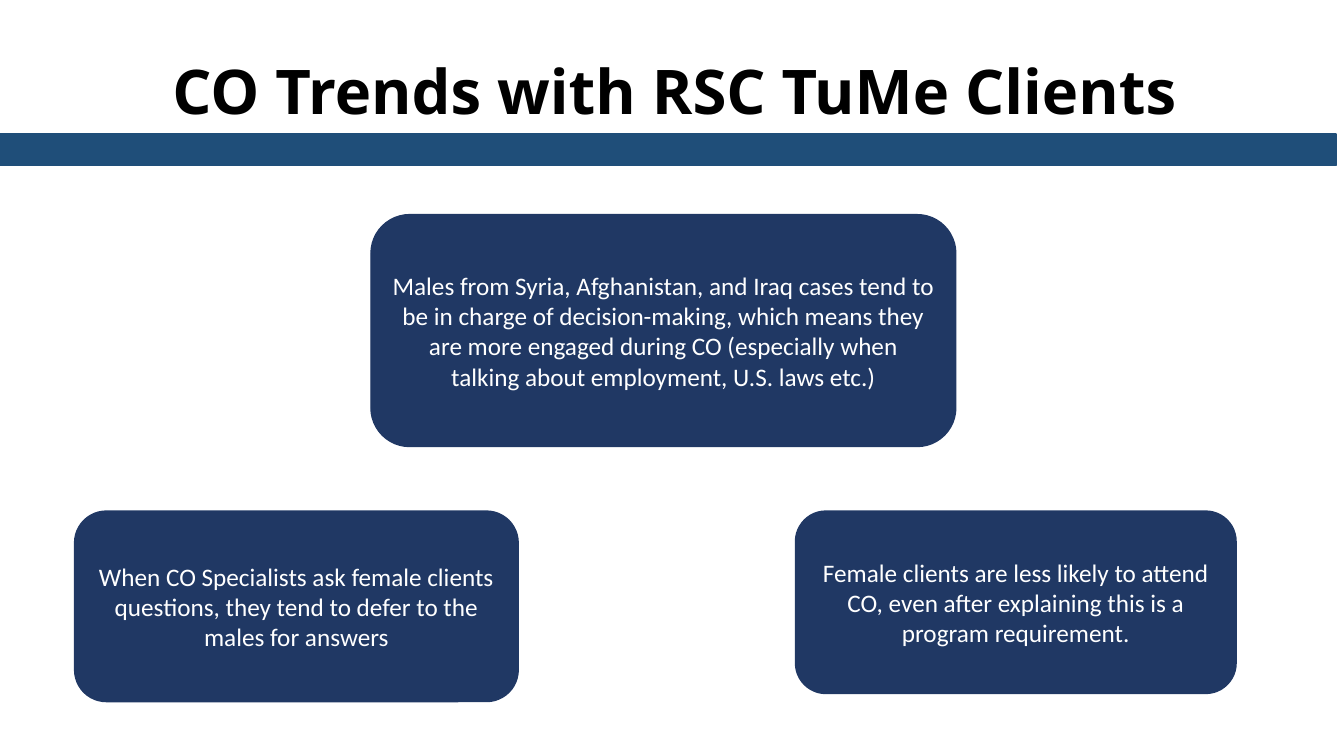
from dataclasses import dataclass

from pptx import Presentation
from pptx.dml.color import RGBColor
from pptx.enum.shapes import MSO_SHAPE as Shape
from pptx.enum.text import MSO_ANCHOR as Anchor, MSO_AUTO_SIZE as AutoSize, PP_ALIGN as Align
from pptx.util import Inches, Pt


@dataclass(frozen=True)
class Theme:
    title_font: str = "Open Sans"
    body_font: str = "Calibri"
    title_size: int = 44
    body_size: int = 18
    title_color: str = "000000"
    body_color: str = "FFFFFF"
    band: str = "1F4E79"
    card: str = "203864"


THEME = Theme()

TITLE = "CO Trends with RSC TuMe Clients"
TITLE_BOX = (0.58, 0.47, 12.23, 0.84)
BAND_BOX = (-0.08, 1.33, 13.33, 0.31)
LOWER_TOP = 5.07
CARDS = [
    ((3.68, 2.13, 5.8, 2.3),
     "Males from Syria, Afghanistan, and Iraq cases tend to be in charge of "
     "decision-making, which means they are more engaged during CO (especially "
     "when talking about employment, U.S. laws etc.)"),
    ((0.74, LOWER_TOP, 4.4, 1.89),
     "When CO Specialists ask female clients questions, they tend to defer to "
     "the males for answers"),
    ((7.89, LOWER_TOP, 4.37, 1.81),
     "Female clients are less likely to attend CO, even after explaining this "
     "is a program requirement."),
]


def write_text(shape, text, font_name, size, color, bold=False):
    """Fill a shape with one centred, wrapped paragraph."""
    frame = shape.text_frame
    frame.text = text
    frame.word_wrap = True
    frame.auto_size = AutoSize.NONE
    frame.vertical_anchor = Anchor.MIDDLE
    para = frame.paragraphs[0]
    para.alignment = Align.CENTER
    font = para.runs[0].font
    font.name, font.size, font.bold = font_name, Pt(size), bold
    font.color.rgb = RGBColor.from_string(color)


def add_block(page, kind, box, color):
    """Add a flat shape whose outline matches its fill."""
    block = page.shapes.add_shape(kind, *map(Inches, box))
    block.shadow.inherit = False
    block.fill.solid()
    block.fill.fore_color.rgb = RGBColor.from_string(color)
    block.line.color.rgb = RGBColor.from_string(color)
    block.line.width = Pt(1)
    return block


def place_title(page, box, text):
    title = page.shapes.title
    title.left, title.top, title.width, title.height = map(Inches, box)
    write_text(title, text, THEME.title_font, THEME.title_size, THEME.title_color, bold=True)


def add_card(page, box, text):
    card = add_block(page, Shape.ROUNDED_RECTANGLE, box, THEME.card)
    write_text(card, text, THEME.body_font, THEME.body_size, THEME.body_color)


def build_trends_slide(deck):
    page = deck.slides.add_slide(deck.slide_layouts.get_by_name("Title Only"))
    place_title(page, TITLE_BOX, TITLE)
    add_block(page, Shape.RECTANGLE, BAND_BOX, THEME.band)
    for box, text in CARDS:
        add_card(page, box, text)


def main():
    deck = Presentation()
    deck.slide_width, deck.slide_height = Inches(13.33), Inches(7.5)
    build_trends_slide(deck)
    deck.save("out.pptx")


if __name__ == "__main__":
    main()
